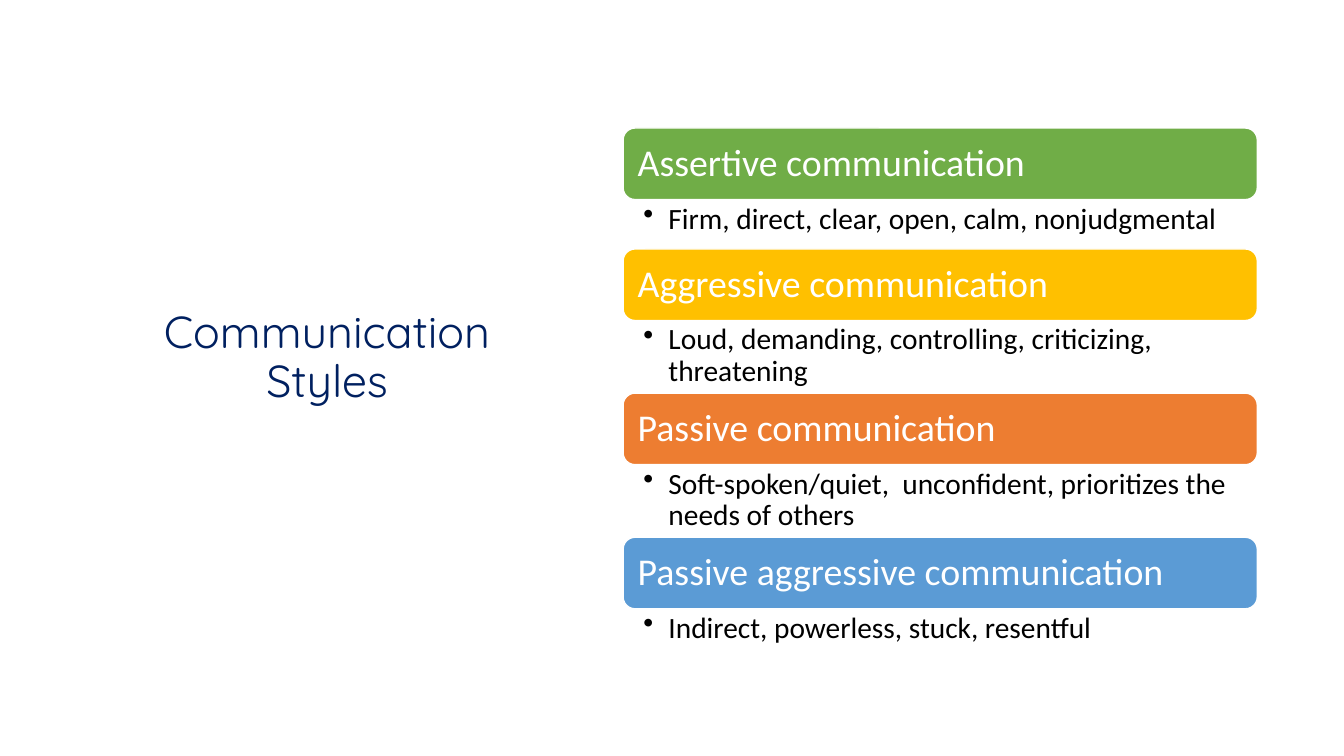
from lxml import etree
from pptx import Presentation
from pptx.dml.color import RGBColor
from pptx.enum import shapes, text
from pptx.oxml import ns
from pptx.util import Inches, Pt

STYLES = [
    ("Assertive communication", "70AD47",
     "Firm, direct, clear, open, calm, nonjudgmental", 0.49),
    ("Aggressive communication", "FFC000",
     "Loud, demanding, controlling, criticizing, threatening", 0.72),
    ("Passive communication", "ED7D31",
     "Soft-spoken/quiet,  unconfident, prioritizes the needs of others", 0.72),
    ("Passive aggressive communication", "5B9BD5",
     "Indirect, powerless, stuck, resentful", 0.49),
]
LEFT, TOP, WIDTH, BAR_HEIGHT = 6.18, 1.27, 6.29, 0.71


def color(code):
    return RGBColor.from_string(code)


class StyleSlide:
    title_font = "Quicksand"
    body_font = "Calibri"

    def __init__(self, deck):
        self.slide = deck.slides.add_slide(deck.slide_layouts[5])

    def add_wording(self, frame, wording, size, font, code, align, anchor, insets=None):
        """Put one formatted run into a frame and return its paragraph."""
        frame.word_wrap = True
        frame.auto_size = text.MSO_AUTO_SIZE.NONE
        frame.vertical_anchor = anchor
        if insets:
            (frame.margin_left, frame.margin_top,
             frame.margin_right, frame.margin_bottom) = map(Inches, insets)
        paragraph = frame.paragraphs[0]
        paragraph.alignment = align
        paragraph.line_spacing = 0.9
        run = paragraph.add_run()
        run.text = wording
        run.font.size = Pt(size)
        run.font.name = font
        run.font.color.rgb = color(code)
        return paragraph

    def title(self, wording, *box):
        heading = self.slide.shapes.title
        heading.left, heading.top, heading.width, heading.height = map(Inches, box)
        self.add_wording(heading.text_frame, wording, 32, self.title_font, "002060",
                         text.PP_ALIGN.CENTER, text.MSO_ANCHOR.MIDDLE)

    def bar(self, wording, fill, *box):
        bar = self.slide.shapes.add_shape(
            shapes.MSO_SHAPE.ROUNDED_RECTANGLE, *map(Inches, box))
        bar.shadow.inherit = False
        bar.fill.solid()
        bar.fill.fore_color.rgb = color(fill)
        bar.line.color.rgb = color("FFFFFF")
        bar.line.width = Pt(1)
        self.add_wording(bar.text_frame, wording, 27, self.body_font, "FFFFFF",
                         text.PP_ALIGN.LEFT, text.MSO_ANCHOR.MIDDLE, [0.11] * 4)

    def bullet(self, wording, *box):
        traits = self.slide.shapes.add_textbox(*map(Inches, box))
        paragraph = self.add_wording(
            traits.text_frame, wording, 21, self.body_font, "000000",
            text.PP_ALIGN.LEFT, text.MSO_ANCHOR.TOP, (0.2, 0.04, 0.21, 0.04))
        paragraph.level = 1
        properties = paragraph._p.get_or_add_pPr()
        properties.set("marL", str(Inches(0.25)))
        properties.set("indent", str(-Inches(0.25)))
        etree.SubElement(properties, ns.qn("a:buChar")).set("char", "•")


def main():
    deck = Presentation()
    deck.slide_width, deck.slide_height = Inches(13.33), Inches(7.5)
    page = StyleSlide(deck)
    page.title("Communication Styles", 1.09, 0.5, 4.31, 6.11)
    top = TOP
    for name, fill, traits, traits_height in STYLES:
        page.bar(name, fill, LEFT, top, WIDTH, BAR_HEIGHT)
        top += BAR_HEIGHT
        page.bullet(traits, LEFT, top, WIDTH, traits_height)
        top += traits_height
    deck.save("out.pptx")


if __name__ == "__main__":
    main()
